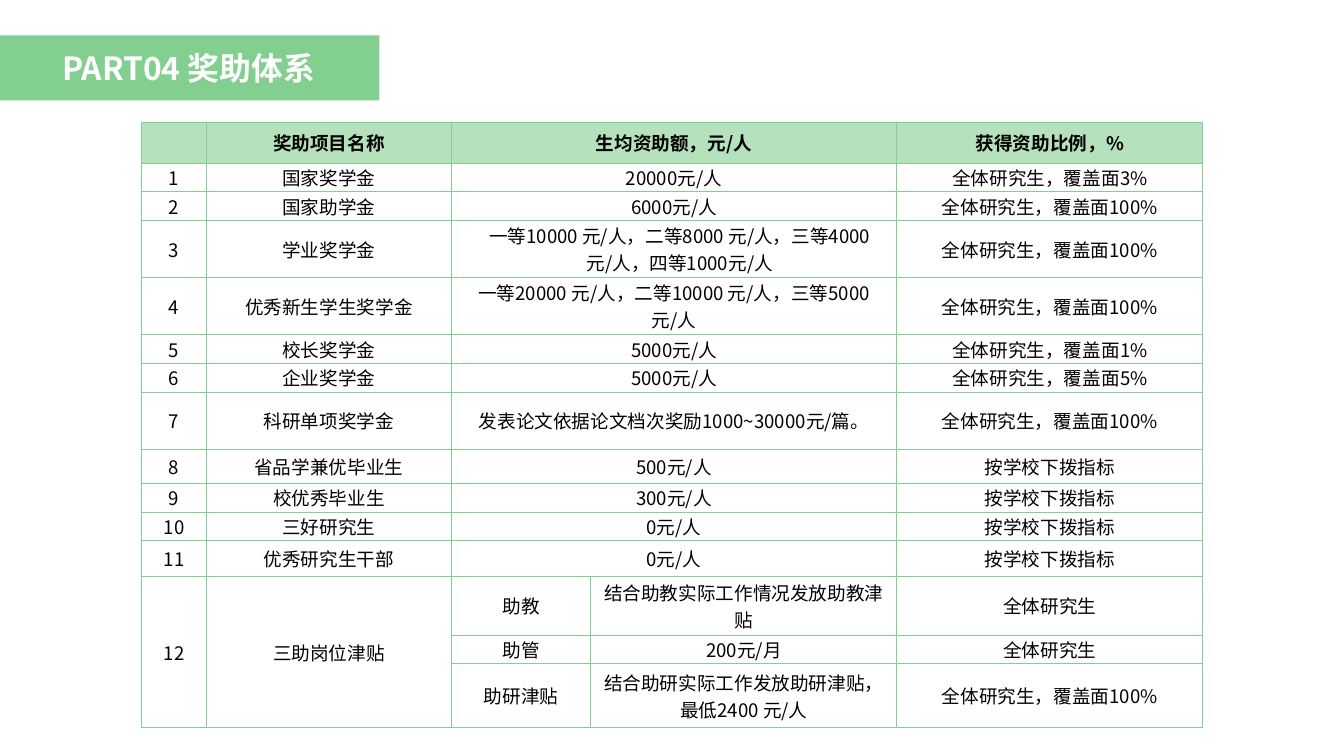
from lxml import etree
from pptx import Presentation
from pptx.dml.color import RGBColor
from pptx.enum.shapes import MSO_SHAPE
from pptx.enum.text import MSO_ANCHOR, PP_ALIGN
from pptx.oxml.ns import qn
from pptx.util import Cm, Pt

RECT = MSO_SHAPE.RECTANGLE
MIDDLE = MSO_ANCHOR.MIDDLE
CENTER = PP_ALIGN.CENTER

FONT = "Noto Sans CJK SC"
GREEN, PALE_GREEN = "83CF8F", "B5E2BC"
BLACK, WHITE = "000000", "FFFFFF"

COL_WIDTHS = [1.73, 6.5, 3.71, 8.13, 8.13]
ROW_HEIGHTS = [1.09, 0.76, 0.76, 1.52, 1.52, 0.76, 0.76, 1.52,
               0.91, 0.76, 0.76, 0.94, 1.57, 0.76, 1.7]

HEADER = ("奖助项目名称", "生均资助额，元/人", "获得资助比例，%")
COVERAGE = "全体研究生，覆盖面"
QUOTA = "按学校下拨指标"

# Award name, amount per student, share of students
AWARDS = [
    ("国家奖学金", "20000元/人", COVERAGE + "3%"),
    ("国家助学金", "6000元/人", COVERAGE + "100%"),
    ("学业奖学金", "一等10000 元/人，二等8000 元/人，三等4000元/人，四等1000元/人",
     COVERAGE + "100%"),
    ("优秀新生学生奖学金", "一等20000 元/人，二等10000 元/人，三等5000元/人",
     COVERAGE + "100%"),
    ("校长奖学金", "5000元/人", COVERAGE + "1%"),
    ("企业奖学金", "5000元/人", COVERAGE + "5%"),
    ("科研单项奖学金", "发表论文依据论文档次奖励1000~30000元/篇。", COVERAGE + "100%"),
    ("省品学兼优毕业生", "500元/人", QUOTA),
    ("校优秀毕业生", "300元/人", QUOTA),
    ("三好研究生", "0元/人", QUOTA),
    ("优秀研究生干部", "0元/人", QUOTA),
]

# Post, allowance, share of students
POSTS = [
    ("助教", "结合助教实际工作情况发放助教津贴", "全体研究生"),
    ("助管", "200元/月", "全体研究生"),
    ("助研津贴", "结合助研实际工作发放助研津贴，最低2400 元/人", COVERAGE + "100%"),
]


def rgb(color):
    return RGBColor.from_string(color)


def write(tf, text, size=14, color=BLACK, bold=False):
    p = tf.paragraphs[0]
    p.alignment = CENTER
    r = p.add_run()
    r.text = text
    r.font.size = Pt(size)
    r.font.bold = bold
    r.font.name = FONT
    r.font.color.rgb = rgb(color)
    etree.SubElement(r.font._element, qn("a:ea"), typeface=FONT)


def add_banner(slide, text):
    s = slide.shapes.add_shape(RECT, Cm(-0.05), Cm(0.94), Cm(10.13), Cm(1.73))
    s.shadow.inherit = False
    s.fill.solid()
    s.fill.fore_color.rgb = rgb(GREEN)
    s.line.fill.background()
    s.text_frame.vertical_anchor = MIDDLE
    write(s.text_frame, text, size=24, color=WHITE, bold=True)


def set_borders(cell):
    tc_pr = cell._tc.get_or_add_tcPr()
    for side in ("lnL", "lnR", "lnT", "lnB"):
        ln = etree.SubElement(tc_pr, qn(f"a:{side}"), w=str(Pt(1)))
        fill = etree.SubElement(ln, qn("a:solidFill"))
        etree.SubElement(fill, qn("a:srgbClr"), val=GREEN)


def format_cell(cell, fill=None, side=0.18):
    cell.margin_left = cell.margin_right = Cm(side)
    cell.margin_top = cell.margin_bottom = 0
    cell.vertical_anchor = MIDDLE
    set_borders(cell)
    if fill:
        cell.fill.solid()
        cell.fill.fore_color.rgb = rgb(fill)
    else:
        cell.fill.background()


def add_grid(slide):
    frame = slide.shapes.add_table(
        len(ROW_HEIGHTS), len(COL_WIDTHS), Cm(3.76), Cm(3.25),
        Cm(sum(COL_WIDTHS)), Cm(sum(ROW_HEIGHTS)))
    table = frame.table
    table.first_row = table.horz_banding = False
    for col, width in zip(table.columns, COL_WIDTHS):
        col.width = Cm(width)
    for row, height in zip(table.rows, ROW_HEIGHTS):
        row.height = Cm(height)
    for i, row in enumerate(table.rows):
        for j, cell in enumerate(row.cells):
            format_cell(cell, fill=None if i else PALE_GREEN,
                        side=0.18 if j else 0.1)
    return table


def fill_row(table, row, texts, cols, **fmt):
    for col, text in zip(cols, texts):
        write(table.cell(row, col).text_frame, text, **fmt)


def add_award_table(slide):
    table = add_grid(slide)

    # Header and single awards: the amount spans two columns
    for row in range(len(AWARDS) + 1):
        table.cell(row, 2).merge(table.cell(row, 3))
    fill_row(table, 0, HEADER, (1, 2, 4), bold=True)
    for row, award in enumerate(AWARDS, 1):
        fill_row(table, row, (str(row), *award), (0, 1, 2, 4))
    # Tiered award text is set in from the left
    table.cell(3, 2).margin_left = Cm(0.48)

    # Post allowances: number and name span all posts
    first = len(AWARDS) + 1
    for col in (0, 1):
        table.cell(first, col).merge(table.cell(first + len(POSTS) - 1, col))
    fill_row(table, first, (str(first), "三助岗位津贴"), (0, 1))
    for row, post in enumerate(POSTS, first):
        fill_row(table, row, post, (2, 3, 4))


def main():
    prs = Presentation()
    prs.slide_width, prs.slide_height = Cm(35.71), Cm(20.09)
    slide = prs.slides.add_slide(prs.slide_layouts[6])
    add_banner(slide, "PART04 奖助体系")
    add_award_table(slide)
    prs.save("out.pptx")


if __name__ == "__main__":
    main()
